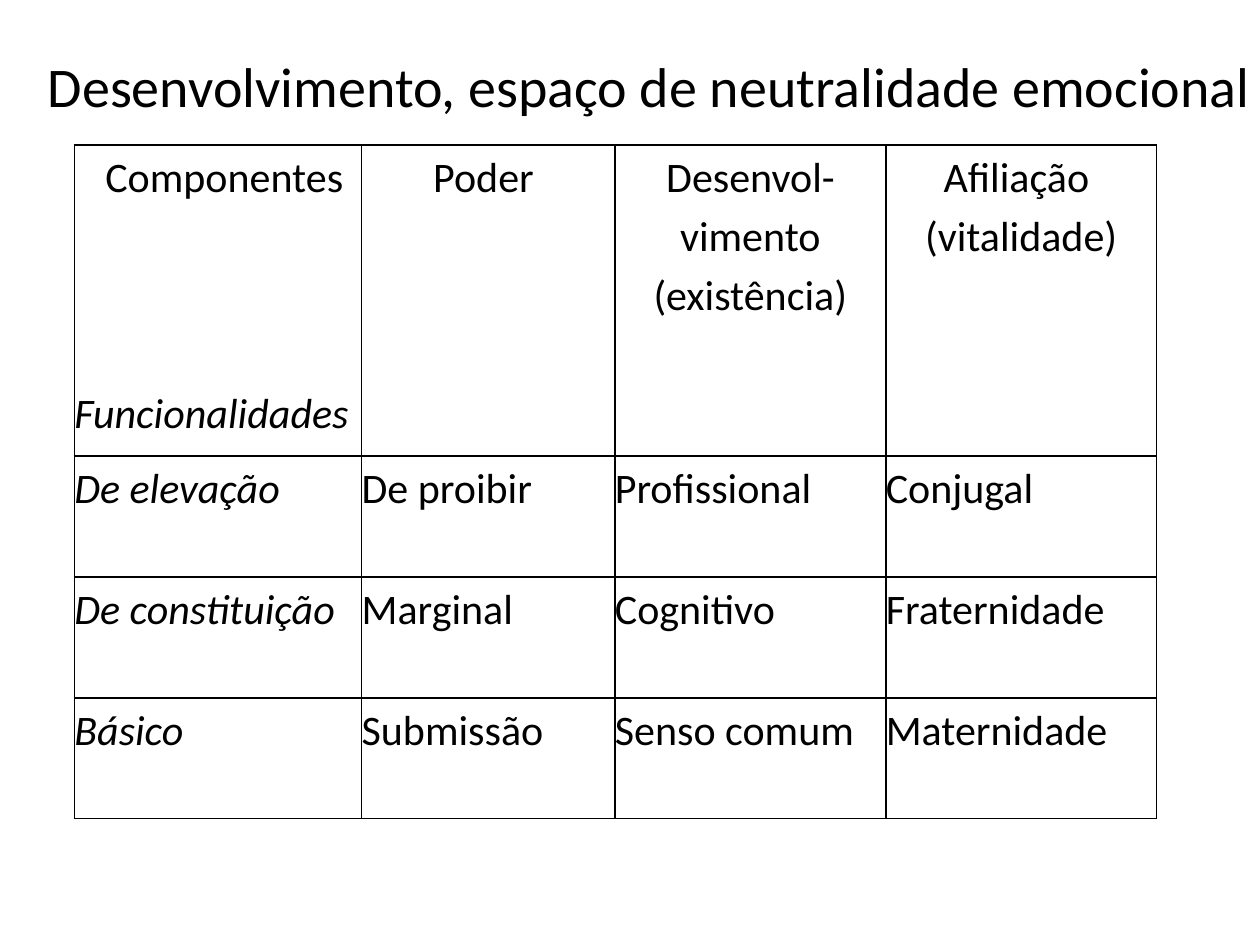
from typing import NamedTuple

from lxml.etree import SubElement as Sub
from pptx import Presentation
from pptx.dml.color import RGBColor
from pptx.enum.text import MSO_ANCHOR, MSO_AUTO_SIZE, PP_ALIGN as Align
from pptx.oxml.ns import qn
from pptx.util import Pt

HUES = {"ink": "000000", "page": "FFFFFF"}
FONT = "Calibri"
COLS = [164.2, 144.7, 154.8, 154.8]
ROWS = [177.8, 69.1, 69.1, 69.1]


class Line(NamedTuple):
    text: str
    align: Align = Align.LEFT
    slant: bool = False
    indent: float = 0
    before: float = 0


def head(*texts: str) -> list[Line]:
    return [Line(text, Align.CENTER) for text in texts]


def row(label: str, *texts: str) -> list[list[Line]]:
    return [[Line(label, slant=True)]] + [[Line(text)] for text in texts]


GRID = [
    [
        [Line("Componentes", indent=17.7),
         Line("Funcionalidades", slant=True, before=101)],
        head("Poder "),
        head("Desenvol-vimento (existência)"),
        head("Afiliação ", "(vitalidade)"),
    ],
    row("De elevação", "De proibir", "Profissional", "Conjugal"),
    row("De constituição", "Marginal", "Cognitivo", "Fraternidade"),
    row("Básico", "Submissão", "Senso comum", "Maternidade"),
]


def write(para, text: str, *, size: float, align=Align.LEFT, slant=False,
          indent=0.0, before=0.0, pitch=1.0) -> None:
    para.alignment = align
    para.line_spacing = pitch
    if before:
        para.space_before = Pt(before)
    if indent:
        para._p.get_or_add_pPr().set("marL", str(Pt(indent)))
    run = para.add_run()
    run.text = text
    font = run.font
    font.name, font.size, font.italic = FONT, Pt(size), slant
    font.color.rgb = RGBColor.from_string(HUES["ink"])


def frame(cell, width: float = 1) -> None:
    """Give all four sides of the cell a solid border."""
    props = cell._tc.get_or_add_tcPr()
    for side in ("lnL", "lnR", "lnT", "lnB"):
        edge = Sub(props, qn(f"a:{side}"), w=str(Pt(width)))
        fill = Sub(edge, qn("a:solidFill"))
        Sub(fill, qn("a:srgbClr"), val=HUES["ink"])


def fill_cell(cell, lines: list[Line]) -> None:
    cell.margin_left = cell.margin_right = Pt(0)
    cell.margin_top = cell.margin_bottom = Pt(0)
    frame(cell)
    cell.fill.background()
    body = cell.text_frame
    for num, line in enumerate(lines):
        para = body.add_paragraph() if num else body.paragraphs[0]
        write(para, line.text, size=24, align=line.align, slant=line.slant,
              indent=line.indent, before=line.before, pitch=1.15)


def add_grid(slide) -> None:
    table = slide.shapes.add_table(
        len(ROWS), len(COLS), Pt(42.5), Pt(82.8),
        Pt(sum(COLS)), Pt(sum(ROWS))).table
    table.first_row = table.horz_banding = False
    for col, width in zip(table.columns, COLS):
        col.width = Pt(width)
    for band, height, cells in zip(table.rows, ROWS, GRID):
        band.height = Pt(height)
        for cell, lines in zip(band.cells, cells):
            fill_cell(cell, lines)


def add_title(slide, text: str) -> None:
    box = slide.shapes.add_textbox(Pt(20.2), Pt(25.9), Pt(709.2), Pt(46))
    body = box.text_frame
    body.word_wrap = False
    body.auto_size = MSO_AUTO_SIZE.SHAPE_TO_FIT_TEXT
    body.vertical_anchor = MSO_ANCHOR.MIDDLE
    write(body.paragraphs[0], text, size=32)


def main() -> None:
    deck = Presentation()
    deck.slide_width, deck.slide_height = Pt(720), Pt(540)
    slide = deck.slides.add_slide(deck.slide_layouts[6])
    back = slide.background.fill
    back.solid()
    back.fore_color.rgb = RGBColor.from_string(HUES["page"])
    add_grid(slide)
    add_title(slide, "Desenvolvimento, espaço de neutralidade emocional")
    deck.save("out.pptx")


if __name__ == "__main__":
    main()
